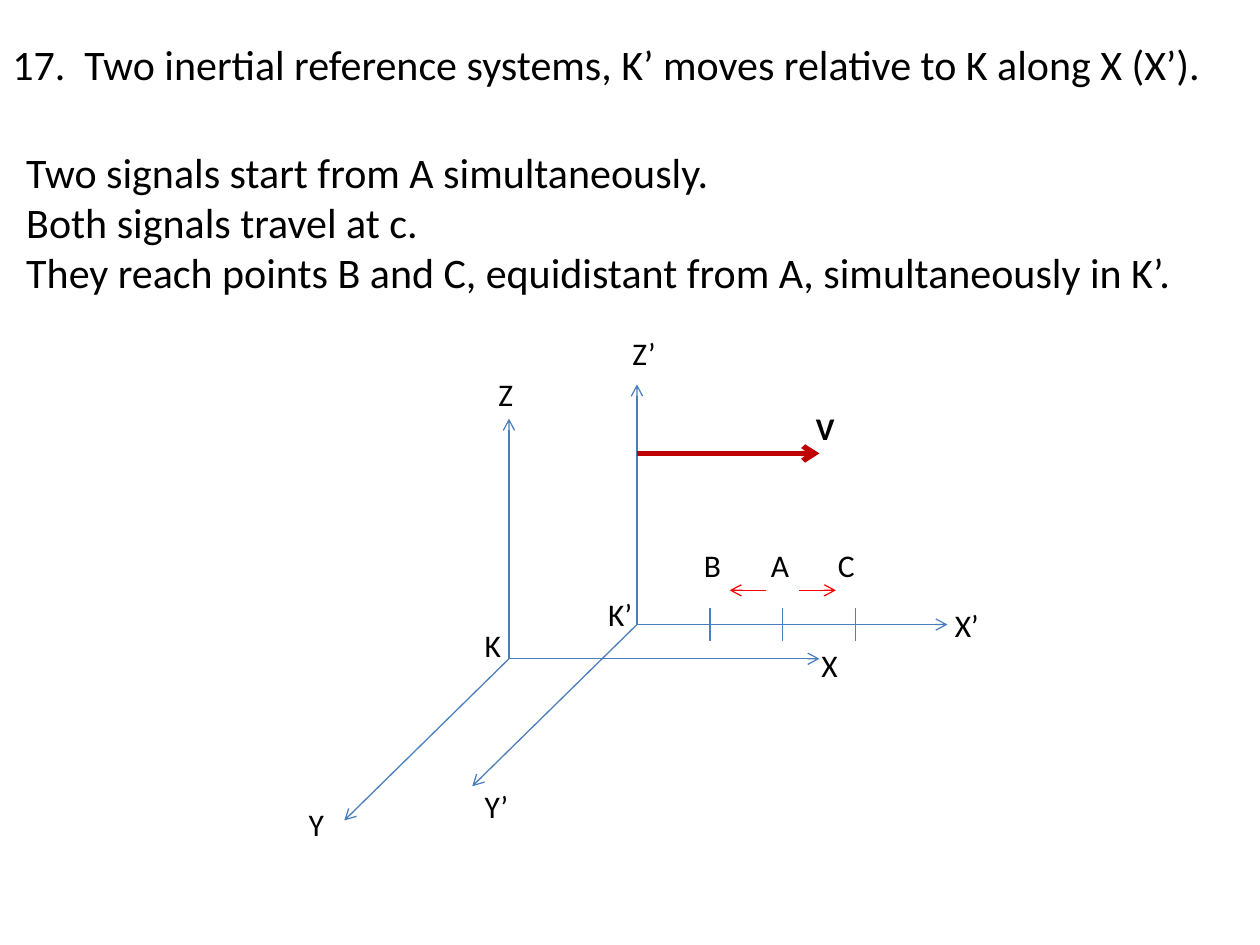
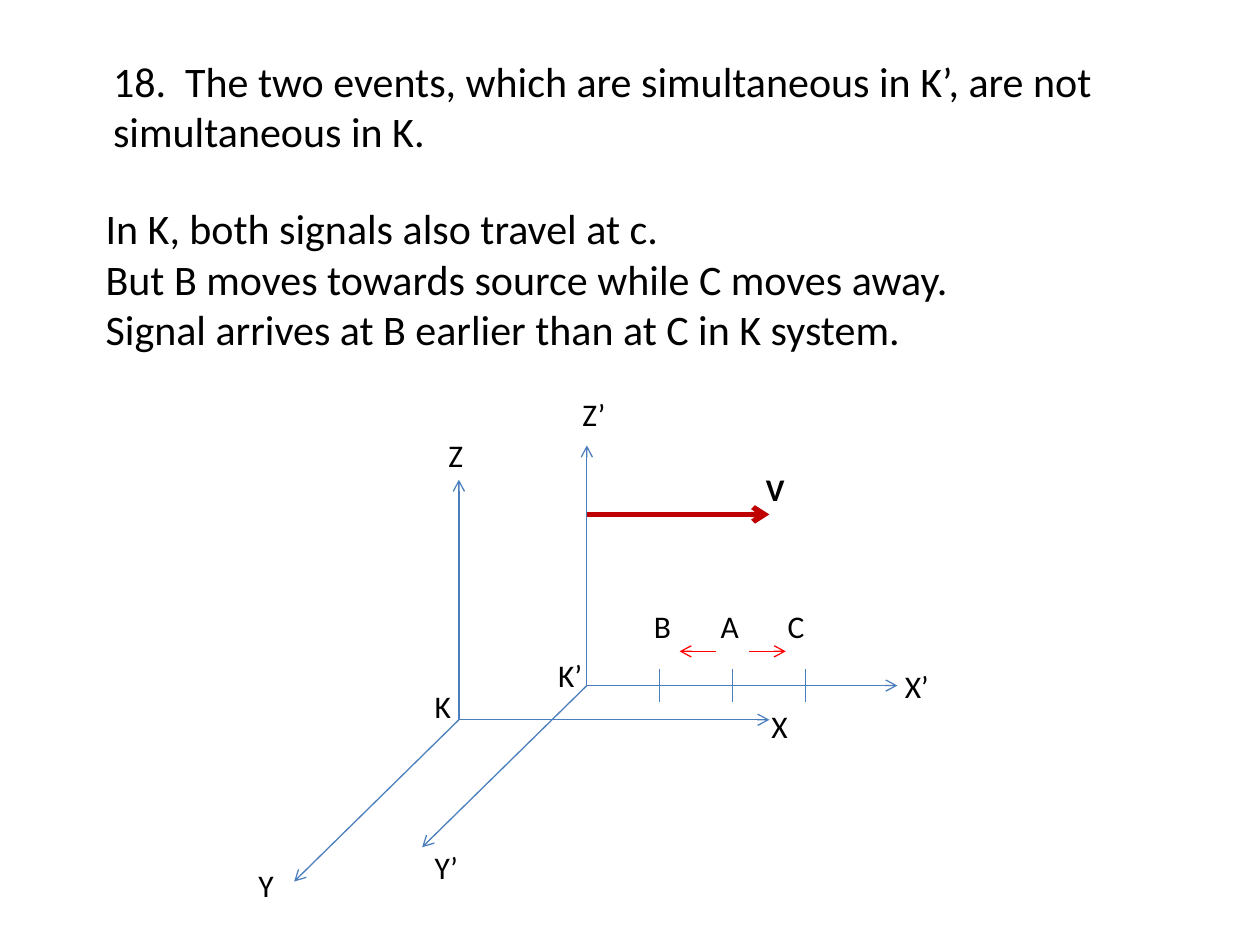
from lxml import etree
from pptx import Presentation
from pptx.dml.color import RGBColor
from pptx.enum import shapes, text
from pptx.oxml import ns
from pptx.util import Cm, Pt

FONT = "Calibri"
BLACK, BLUE, RED, DARK = "000000", "4B7EBC", "FF0000", "C00000"

# Offsets in cm from the origin of a frame
AXES = [(0, -4.84), (-3.32, 3.26), (6.26, 0)]
SHIFT = (2.58, -0.69)  # from K to K’
TICK = 1.47  # gap between B, A and C on the X’ axis

# Text, left, top, width; offsets in cm from the origin of K
NAMES = [
    ("K", -0.74, -0.79, 1.47),
    ("Z", -0.46, -5.84, 1.42),
    ("Y", -4.29, 2.82, 1.45),
    ("X", 6.05, -0.38, 1.47),
    ("K’", 1.75, -1.4, 1.75),
    ("Z’", 2.24, -6.68, 1.88),
    ("Y’", -0.74, 2.46, 1.73),
    ("X’", 8.74, -1.19, 1.75),
]


def paint(target, color):
    """Give a fill, line fill or font colour holder a solid hex colour."""
    target.rgb = RGBColor.from_string(color)


def add_text(parent, lines, left, top, width, height, size, bold=False):
    box = parent.add_textbox(Cm(left), Cm(top), Cm(width), Cm(height))
    frame = box.text_frame
    frame.word_wrap = True
    frame.auto_size = text.MSO_AUTO_SIZE.SHAPE_TO_FIT_TEXT
    frame.text = lines
    for para in frame.paragraphs:
        for run in para.runs:
            run.font.name = FONT
            run.font.size = Pt(size)
            run.font.bold = bold
            paint(run.font.color, BLACK)


def add_line(parent, start, end, color=BLUE, width=0.75, arrow=True):
    ends = [Cm(v) for v in (*start, *end)]
    line = parent.add_connector(shapes.MSO_CONNECTOR.STRAIGHT, *ends)
    paint(line.line.color, color)
    line.line.width = Pt(width)
    if arrow:
        tip = etree.SubElement(line.line._get_or_add_ln(), ns.qn("a:tailEnd"))
        tip.set("type", "arrow")
    props = line._element.spPr
    etree.SubElement(props, ns.qn("a:effectLst"))


def add_axes(parent, x, y):
    for dx, dy in AXES:
        add_line(parent, (x, y), (x + dx, y + dy))


def add_points(parent, x, y):
    """Mark B, A and C on the X’ axis, with the signals leaving A."""
    for i, name in enumerate("BAC"):
        at = x + TICK * (i + 1)
        add_line(parent, (at, y - 0.34), (at, y + 0.34), arrow=False)
        add_text(parent, name, x + 1.1 + 1.35 * i, y - 1.7, 1.2, 1.02, 18)
    mid = x + 2 * TICK
    for side in (-1, 1):
        add_line(parent, (mid + side * 0.33, y - 0.69),
                 (mid + side * 1.07, y - 0.69), RED)


def add_frames(slide, x, y):
    """Draw K at x, y and the moving frame K’ beside it."""
    group = slide.shapes.add_group_shape().shapes
    px, py = x + SHIFT[0], y + SHIFT[1]
    add_axes(group, x, y)
    add_axes(group, px, py)
    add_points(group, px, py)
    for name, dx, dy, width in NAMES:
        add_text(group, name, x + dx, y + dy, width, 1.02, 18)
    add_line(group, (px, py - 3.45), (px + 3.68, py - 3.45), DARK, 3)
    add_text(group, "V", x + 5.94, y - 5.16, 1.55, 1.02, 18, bold=True)


def main():
    deck = Presentation()
    deck.slide_width, deck.slide_height = Cm(25.4), Cm(19.05)
    blank = deck.slide_layouts[6]

    first = deck.slides.add_slide(blank)
    add_frames(first, 10.26, 13.28)
    add_text(first.shapes,
             "17.  Two inertial reference systems, K’ moves relative to K "
             "along X (X’).", 0, 0.66, 24.84, 1.27, 24)
    add_text(first.shapes,
             "Two signals start from A simultaneously.\n"
             "Both signals travel at c.\n"
             "They reach points B and C, equidistant from A, "
             "simultaneously in K’.", 0.28, 2.82, 24.84, 3.33, 24)

    second = deck.slides.add_slide(blank)
    add_text(second.shapes,
             "18.  The two events, which are simultaneous in K’, are not "
             "simultaneous in K.", 2.03, 0.99, 20.6, 2.31, 24)
    add_text(second.shapes,
             "In K, both signals also travel at c.\n"
             "But B moves towards source while C moves away.\n"
             "Signal arrives at B earlier than at C in K system.",
             1.88, 3.96, 22.02, 3.33, 24)
    add_frames(second, 9.25, 14.51)

    deck.save("out.pptx")


if __name__ == "__main__":
    main()
